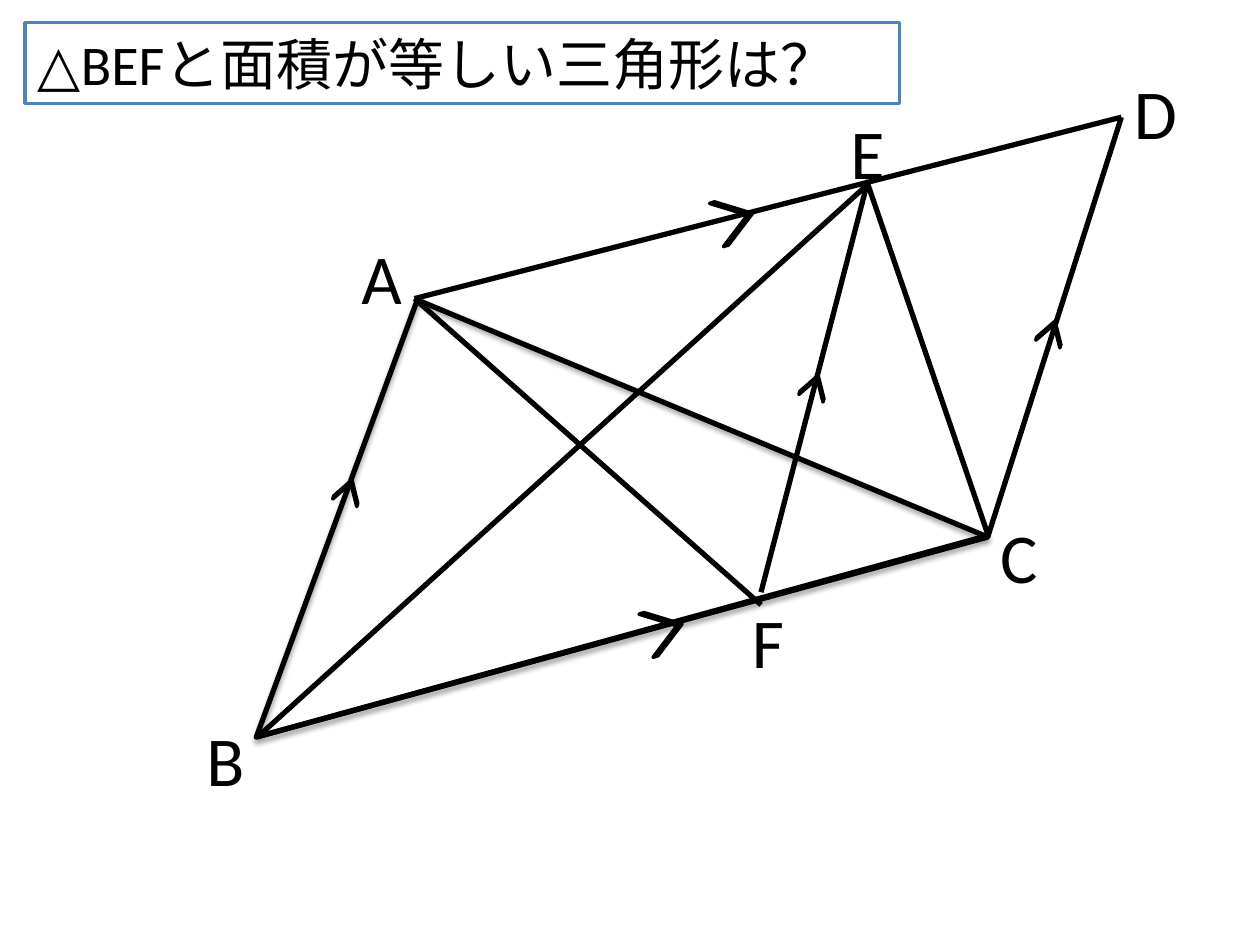
import pptx
import pptx.dml.color
import pptx.enum.shapes
import pptx.enum.text
import pptx.oxml
import pptx.oxml.ns
import pptx.util
from lxml import etree

EMU_PER_PX = 9144
BLACK = "000000"
SHAPES = pptx.enum.shapes.MSO_SHAPE
TEXT = pptx.enum.text

VERTICES = {"A": (329, 237), "C": (784, 426), "D": (890, 93), "E": (689, 143), "F": (604, 480)}
SEGMENTS = [("D", "C"), ("D", "A"), ("F", "A")]
PARALLEL_EF = (VERTICES["E"], (604, 470))
LABELS = {
    "A": (277, 181, 53),
    "B": (154, 564, 51),
    "C": (784, 403, 50),
    "D": (890, 50, 55),
    "E": (665, 82, 48),
    "F": (587, 470, 46),
}
LABEL_HEIGHT = 77
TRIANGLES = {
    "ABC": ((153, 210, 602, 301), 344.7, 0.357),
    "EBC": ((155, 216, 601, 294), 344.6, 0.97),
}
MARK_STYLES = [
    ((30, 36), 342.1, [(568, 156), (512, 482)]),
    ((19, 20), 287.5, [(267, 380), (637, 297), (825, 254)]),
]


def px(*lengths):
    return [pptx.util.Emu(length * EMU_PER_PX) for length in lengths]


def colour(hex_code):
    return pptx.dml.color.RGBColor.from_string(hex_code)


def apply_format(target, values):
    for name, value in values.items():
        setattr(target, name, value)


def set_line(line, width, hex_code=BLACK):
    line.width = pptx.util.Pt(width)
    line.color.rgb = colour(hex_code)


def set_fill(shape, hex_code):
    shape.fill.solid()
    shape.fill.fore_color.rgb = colour(hex_code)


def write_text(shape, words, size, frame_format):
    apply_format(shape.text_frame, frame_format)
    paragraph = shape.text_frame.paragraphs[0]
    paragraph.alignment = TEXT.PP_ALIGN.LEFT
    run = paragraph.add_run()
    run.text = words
    apply_format(run.font, {"name": "Calibri", "size": pptx.util.Pt(size)})
    run.font.color.rgb = colour(BLACK)


def add_question(slide, words):
    question = slide.shapes.title
    left, top, width, height = px(20, 18, 694, 64)
    apply_format(question, {"left": left, "top": top, "width": width, "height": height})
    set_fill(question, "FFFFFF")
    set_line(question.line, 2, "4F81BD")
    write_text(question, words, 32, {
        "word_wrap": True,
        "auto_size": TEXT.MSO_AUTO_SIZE.NONE,
        "vertical_anchor": TEXT.MSO_ANCHOR.MIDDLE,
    })


def add_label(slide, letter, left, top, width):
    label = slide.shapes.add_textbox(*px(left, top, width, LABEL_HEIGHT))
    write_text(label, letter, 40, {
        "word_wrap": False,
        "auto_size": TEXT.MSO_AUTO_SIZE.SHAPE_TO_FIT_TEXT,
    })


def add_segment(slide, start, end):
    straight = pptx.enum.shapes.MSO_CONNECTOR.STRAIGHT
    segment = slide.shapes.add_connector(straight, *px(*start, *end))
    set_line(segment.line, 3)
    etree.SubElement(segment._element.spPr, pptx.oxml.ns.qn("a:effectLst"))


def add_outline(slide, preset, box, rotation, adjustment, line_width):
    outline = slide.shapes.add_shape(preset, *px(*box))
    outline.rotation = rotation
    outline.adjustments[0] = adjustment
    outline.shadow.inherit = False
    set_line(outline.line, line_width)
    return outline


def add_triangle(slide, box, rotation, apex):
    triangle = add_outline(slide, SHAPES.ISOSCELES_TRIANGLE, box, rotation, apex, 3)
    triangle.fill.background()
    return triangle


def add_soft_shadow(shape):
    effects = shape._element.spPr.find(pptx.oxml.ns.qn("a:effectLst"))
    effects.append(pptx.oxml.parse_xml(
        f'<a:outerShdw {pptx.oxml.ns.nsdecls("a")} blurRad="40000" dist="20000" '
        'dir="5400000" rotWithShape="0">'
        f'<a:srgbClr val="{BLACK}"><a:alpha val="38000"/></a:srgbClr></a:outerShdw>'
    ))


def add_parallel_mark(slide, position, size, rotation):
    mark = add_outline(slide, SHAPES.CHEVRON, (*position, *size), rotation, 0.861, 2)
    set_fill(mark, BLACK)


def main():
    deck = pptx.Presentation()
    deck.slide_width, deck.slide_height = px(1000, 750)
    slide = deck.slides.add_slide(deck.slide_layouts[5])

    add_question(slide, "△BEFと面積が等しい三角形は？")
    triangles = {name: add_triangle(slide, *geometry) for name, geometry in TRIANGLES.items()}
    add_soft_shadow(triangles["ABC"])
    for start, end in SEGMENTS:
        add_segment(slide, VERTICES[start], VERTICES[end])
    add_segment(slide, *PARALLEL_EF)
    for letter, place in LABELS.items():
        add_label(slide, letter, *place)
    for size, rotation, positions in MARK_STYLES:
        for position in positions:
            add_parallel_mark(slide, position, size, rotation)

    deck.save("out.pptx")


if __name__ == "__main__":
    main()
